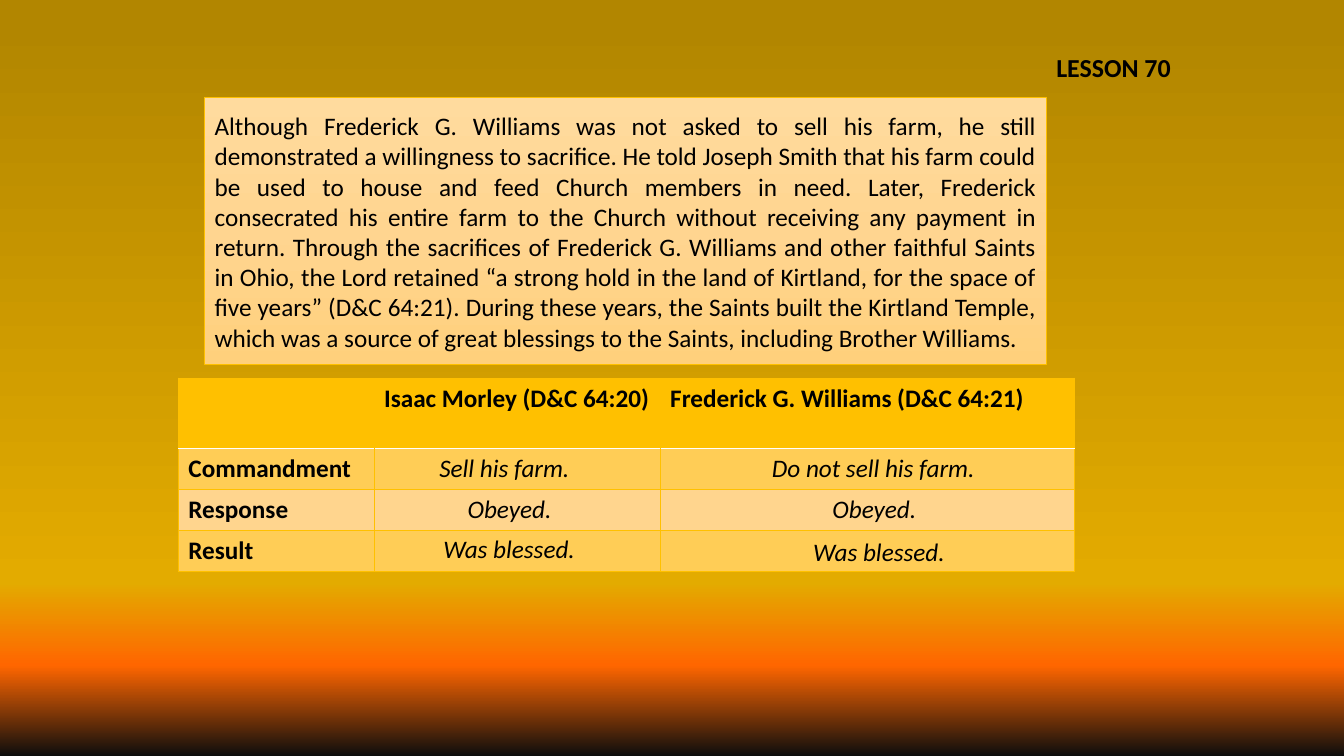
from dataclasses import dataclass

from lxml import etree
from pptx import Presentation
from pptx.dml.color import RGBColor
from pptx.enum.shapes import MSO_SHAPE
from pptx.enum.text import MSO_ANCHOR, MSO_AUTO_SIZE, PP_ALIGN
from pptx.oxml.ns import qn
from pptx.util import Pt

RECTANGLE = MSO_SHAPE.RECTANGLE
JUSTIFY = PP_ALIGN.JUSTIFY
MIDDLE = MSO_ANCHOR.MIDDLE
FIT_SHAPE = MSO_AUTO_SIZE.SHAPE_TO_FIT_TEXT

GOLD, WHITE, BLACK = "FFC000", "FFFFFF", "000000"
DARK_BAND, LIGHT_BAND = "FFCD56", "FFD58E"
SKY = [(0, "0D0D0D"), (12, "FF6600"), (23, "E3AB00"), (97, "B28600")]
PANEL = [(0, "FFDB9E"), (50, "FFD590"), (100, "FFD07C")]

BODY = {"name": "Calibri", "size": Pt(18)}
BOLD = BODY | {"bold": True}
ITALIC = BODY | {"italic": True}
LESSON = BOLD | {"size": Pt(18.5)}

STORY = (
    "Although Frederick G. Williams was not asked to sell his farm, he still "
    "demonstrated a willingness to sacrifice. He told Joseph Smith that his farm "
    "could be used to house and feed Church members in need. Later, Frederick "
    "consecrated his entire farm to the Church without receiving any payment in "
    "return. Through the sacrifices of Frederick G. Williams and other faithful "
    "Saints in Ohio, the Lord retained “a strong hold in the land of Kirtland, for "
    "the space of five years” (D&C 64:21). During these years, the Saints built the "
    "Kirtland Temple, which was a source of great blessings to the Saints, including "
    "Brother Williams."
)
ROWS = [
    ["", "Isaac Morley (D&C 64:20)", "Frederick G. Williams (D&C 64:21)"],
    ["Commandment", "", ""],
    ["Response", "", ""],
    ["Result", "", ""],
]
ROW_FILLS = [GOLD, DARK_BAND, LIGHT_BAND, DARK_BAND]
ROW_HEIGHTS = [50.6, 29.2, 29.2, 29.2]
COLUMN_WIDTHS = [139.8, 204.4, 296]


@dataclass
class Label:
    text: str
    left: float
    top: float
    width: float
    height: float = 29.1


LESSON_LABEL = Label("LESSON 70", 747.4, 33.1, 123.1, 36.7)
ANSWERS = [
    Label("Sell his farm.", 306.7, 319.7, 108.7),
    Label("Obeyed.", 326.9, 348.5, 76.3),
    Label("Do not sell his farm.", 544.3, 319.7, 162),
    Label("Obeyed.", 587.5, 348.5, 76.3),
    Label("Was blessed.", 573.8, 379.4, 109.4),
    Label("Was blessed.", 309.6, 377.3, 109.4),
]


def color(value: str) -> RGBColor:
    return RGBColor.from_string(value)


def add_solid(parent, value: str) -> None:
    solid = etree.SubElement(parent, qn("a:solidFill"))
    etree.SubElement(solid, qn("a:srgbClr"), val=value)


def paint_gradient(fill, element, stops: list, angle: float) -> None:
    fill.gradient()
    fill.gradient_angle = angle
    stop_list = element.xpath(".//a:gsLst")[0]
    for old_stop in list(stop_list):
        stop_list.remove(old_stop)
    for position, value in stops:
        stop = etree.SubElement(stop_list, qn("a:gs"), pos=str(position * 1000))
        etree.SubElement(stop, qn("a:srgbClr"), val=value)


def write(para, text: str, style: dict) -> None:
    span = para.add_run()
    span.text = text
    span.font.color.rgb = color(BLACK)
    for name, value in style.items():
        setattr(span.font, name, value)


def add_label(page, label: Label, style: dict, wrap: bool):
    box = page.shapes.add_textbox(
        Pt(label.left), Pt(label.top), Pt(label.width), Pt(label.height))
    box.text_frame.word_wrap = wrap
    write(box.text_frame.paragraphs[0], label.text, style)
    return box


def add_story(page) -> None:
    box = page.shapes.add_shape(RECTANGLE, Pt(146.2), Pt(69.8), Pt(601.2), Pt(190.8))
    box.shadow.inherit = False
    paint_gradient(box.fill, box.element, PANEL, 270)
    box.line.color.rgb = color(GOLD)
    box.line.width = Pt(0.5)
    box.text_frame.word_wrap = True
    box.text_frame.vertical_anchor = MIDDLE
    para = box.text_frame.paragraphs[0]
    para.alignment = JUSTIFY
    write(para, STORY, BODY)


def set_borders(cell, borders: dict) -> None:
    properties = cell._tc.get_or_add_tcPr()
    for index, (side, (value, width)) in enumerate(borders.items()):
        line = etree.Element(qn(f"a:ln{side}"), w=str(Pt(width)))
        if value:
            add_solid(line, value)
        else:
            etree.SubElement(line, qn("a:noFill"))
        properties.insert(index, line)


def add_comparison(page) -> None:
    frame = page.shapes.add_table(
        len(ROWS), len(COLUMN_WIDTHS), Pt(127.4), Pt(270),
        Pt(sum(COLUMN_WIDTHS)), Pt(sum(ROW_HEIGHTS)))
    table = frame.table
    for column, width in zip(table.columns, COLUMN_WIDTHS):
        column.width = Pt(width)
    thin, divider, empty = (GOLD, 0.5), (WHITE, 1), (None, 0.5)
    last = len(COLUMN_WIDTHS) - 1
    for r, texts in enumerate(ROWS):
        table.rows[r].height = Pt(ROW_HEIGHTS[r])
        inner = thin if r else empty
        for c, text in enumerate(texts):
            cell = table.cell(r, c)
            cell.fill.solid()
            cell.fill.fore_color.rgb = color(ROW_FILLS[r])
            set_borders(cell, {
                "L": inner if c else thin,
                "R": inner if c < last else thin,
                "T": divider if r == 1 else thin,
                "B": thin if r else divider,
            })
            if text:
                write(cell.text_frame.paragraphs[0], text, BOLD)


def main() -> None:
    deck = Presentation()
    deck.slide_width, deck.slide_height = Pt(960), Pt(540)
    page = deck.slides.add_slide(deck.slide_layouts[6])

    # Background
    paint_gradient(page.background.fill, page.element, SKY, 90)

    # Lesson number and story
    lesson = add_label(page, LESSON_LABEL, LESSON, True)
    lesson.text_frame.paragraphs[0].space_before = Pt(10)
    add_story(page)

    # Comparison table with its answers
    add_comparison(page)
    for answer in ANSWERS:
        box = add_label(page, answer, ITALIC, False)
        box.text_frame.auto_size = FIT_SHAPE

    deck.save("out.pptx")


if __name__ == "__main__":
    main()
